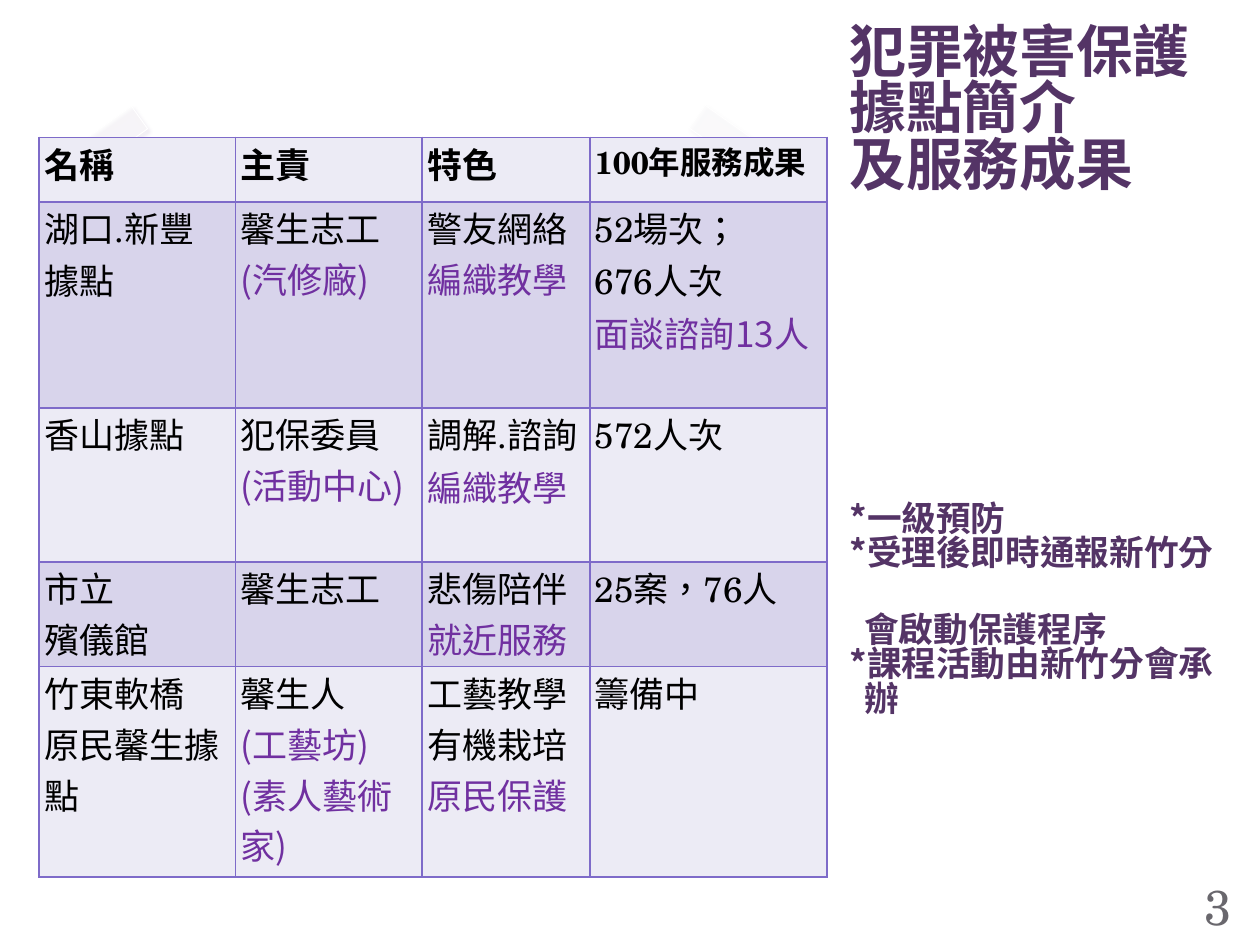
from lxml.etree import SubElement
from pptx import Presentation
from pptx.dml.color import RGBColor
from pptx.enum.shapes import MSO_SHAPE
from pptx.enum.text import MSO_ANCHOR, MSO_AUTO_SIZE, PP_ALIGN
from pptx.oxml import parse_xml
from pptx.oxml.ns import nsdecls, qn
from pptx.util import Cm, Pt

# Content: each table cell holds its plain lines, then its accented lines
HEADING = ["犯罪被害保護", "據點簡介", "及服務成果"]
HEADERS = ["名稱", "主責", "特色", "100年服務成果"]
SITES = [
    [(["湖口.新豐", "據點"], []), (["馨生志工"], ["(汽修廠)"]),
     (["警友網絡"], ["編織教學"]), (["52場次；", "676人次"], ["面談諮詢13人"])],
    [(["香山據點"], []), (["犯保委員"], ["(活動中心)"]),
     (["調解.諮詢"], ["編織教學"]), (["572人次"], [])],
    [(["市立", "殯儀館"], []), (["馨生志工"], []),
     (["悲傷陪伴"], ["就近服務"]), (["25案，76人"], [])],
    [(["竹東軟橋", "原民馨生據點"], []), (["馨生人"], ["(工藝坊)", "(素人藝術家)"]),
     (["工藝教學", "有機栽培"], ["原民保護"]), (["籌備中"], [])],
]
# Notes: text, first-line indent (cm), space before (pt)
NOTES = [
    ("*一級預防", -0.3, 0),
    ("*受理後即時通報新竹分", -0.3, 0),
    ("會啟動保護程序", 0, 24),
    ("*課程活動由新竹分會承\v辦", -0.3, 0),
]
PAGE_NUMBER = "3"

SANS, SERIF = "Noto Sans CJK SC", "TeX Gyre Schola"
THEME = {
    "heading": {"name": SANS, "size": Pt(32.4), "bold": True, "color": "543466"},
    "note": {"name": SANS, "size": Pt(19.8), "bold": True, "color": "543466"},
    "header": {"name": SERIF, "size": Pt(20), "bold": True, "color": "000000"},
    "small header": {"name": SERIF, "size": Pt(18), "bold": True, "color": "000000"},
    "plain": {"name": SERIF, "size": Pt(20), "bold": False, "color": "000000"},
    "accent": {"name": SANS, "size": Pt(20), "bold": False, "color": "7030A0"},
    "number": {"name": SERIF, "size": Pt(28), "bold": False, "color": "69676D"},
    "bands": ["ECEBF5", "D8D4EB"],
    "border": "7E6BC9",
    "paper": "FFFFFF",
    "tape": "FBFBFB",
}

# Layout in centimetres
COLUMN_WIDTHS = [3.96, 3.76, 3.38, 4.78]
ROW_HEIGHTS = [1.3, 3.18, 2.11, 2.11, 4.24]
TABLE_LEFT, TABLE_TOP = 0.79, 2.77
SIDE_LEFT, SIDE_WIDTH = 16.87, 8.13
TAPES = [  # left, top, width, height, rotation, shadow colour, shadow opacity
    (1.09, 2.64, 1.9, 0.56, 324.5, "C0B2CF", 40),
    (13.89, 2.59, 1.8, 0.56, 35.1, "C9C2D1", 20),
]


def add_span(para, text, style):
    para.text = text
    for span in para.runs:
        for name, value in THEME[style].items():
            if name == "color":
                span.font.color.rgb = RGBColor.from_string(value)
            else:
                setattr(span.font, name, value)
        properties = span.font._element
        properties.set("lang", "zh-TW")
        SubElement(properties, qn("a:ea")).set("typeface", SANS)


def fill_frame(frame, lines, **formats):
    for index, (text, style) in enumerate(lines):
        para = frame.add_paragraph() if index else frame.paragraphs[0]
        add_span(para, text, style)
        for name, value in formats.items():
            setattr(para, name, value)


def place(box, left, top, width, height):
    box.left, box.top, box.width, box.height = map(Cm, (left, top, width, height))


def set_frame(frame, **formats):
    settings = {"word_wrap": True, "auto_size": MSO_AUTO_SIZE.NONE,
                "margin_top": 0, "margin_bottom": 0} | formats
    for name, value in settings.items():
        setattr(frame, name, value)


def add_panel(page, kind, spot, color, line_width):
    panel = page.shapes.add_shape(kind, *map(Cm, spot))
    panel.shadow.inherit = False
    panel.fill.solid()
    panel.fill.fore_color.rgb = RGBColor.from_string(color)
    panel.line.color.rgb = RGBColor.from_string(THEME["paper"])
    panel.line.width = Pt(line_width)
    return panel


def add_backdrop(page):
    add_panel(page, MSO_SHAPE.RECTANGLE, (2.11, 2.97, 12.7, 12.7), THEME["paper"], 7)
    for *spot, rotation, shadow, opacity in TAPES:
        tape = add_panel(page, MSO_SHAPE.FLOWCHART_PROCESS, spot, THEME["tape"], 0.5)
        tape.rotation = rotation
        properties = tape._element.spPr
        color = properties.find(qn("a:solidFill"))[0]
        SubElement(color, qn("a:alpha")).set("val", "45000")
        properties.find(qn("a:effectLst")).append(parse_xml(
            f'<a:outerShdw {nsdecls("a")} blurRad="25400" dist="25400" dir="3300000">'
            f'<a:srgbClr val="{shadow}"><a:alpha val="{opacity * 1000}"/></a:srgbClr>'
            "</a:outerShdw>"))


def format_cell(cell, lines, band):
    cell.margin_left = cell.margin_right = Cm(0.1)
    cell.margin_top = cell.margin_bottom = 0
    fill_frame(cell.text_frame, lines)
    properties = cell._tc.get_or_add_tcPr()
    for side in ("lnL", "lnR", "lnT", "lnB"):
        properties.append(parse_xml(
            f'<a:{side} {nsdecls("a")} w="12700"><a:solidFill>'
            f'<a:srgbClr val="{THEME["border"]}"/></a:solidFill></a:{side}>'))
    cell.fill.solid()
    cell.fill.fore_color.rgb = RGBColor.from_string(band)


def add_site_table(page):
    header_styles = ["header"] * 3 + ["small header"]
    rows = [[[pair] for pair in zip(HEADERS, header_styles)]]
    for site in SITES:
        rows.append([[(text, "plain") for text in plain]
                     + [(text, "accent") for text in accent]
                     for plain, accent in site])
    table = page.shapes.add_table(
        len(rows), len(HEADERS), Cm(TABLE_LEFT), Cm(TABLE_TOP),
        Cm(sum(COLUMN_WIDTHS)), Cm(sum(ROW_HEIGHTS))).table
    table.first_row = table.horz_banding = False
    for column, width in zip(table.columns, COLUMN_WIDTHS):
        column.width = Cm(width)
    for index, (row, height) in enumerate(zip(table.rows, ROW_HEIGHTS)):
        row.height = Cm(height)
        for cell, lines in zip(row.cells, rows[index]):
            format_cell(cell, lines, THEME["bands"][index % 2])


def add_side_text(page):
    # Heading
    title, body = page.placeholders
    place(title, SIDE_LEFT, 0.55, SIDE_WIDTH, 4.2)
    set_frame(title.text_frame, vertical_anchor=MSO_ANCHOR.TOP)
    fill_frame(title.text_frame, [("\v".join(HEADING), "heading")],
               alignment=PP_ALIGN.LEFT, line_spacing=0.83)
    # Notes with hanging asterisks
    place(body, SIDE_LEFT, 10.15, SIDE_WIDTH, 5.4)
    set_frame(body.text_frame, vertical_anchor=MSO_ANCHOR.TOP)
    fill_frame(body.text_frame, [(text, "note") for text, *_ in NOTES],
               alignment=PP_ALIGN.LEFT, line_spacing=0.83)
    for para, (_, indent, gap) in zip(body.text_frame.paragraphs, NOTES):
        para.space_before = Pt(gap)
        properties = para._p.get_or_add_pPr()
        properties.set("marL", str(Cm(0.3)))
        properties.set("indent", str(Cm(indent)))
        SubElement(properties, qn("a:buNone"))


def add_page_number(page):
    box = page.shapes.add_textbox(Cm(23.93), Cm(17.53), Cm(1.27), Cm(1.32))
    set_frame(box.text_frame, vertical_anchor=MSO_ANCHOR.BOTTOM,
              margin_left=0, margin_right=0)
    fill_frame(box.text_frame, [(PAGE_NUMBER, "number")], alignment=PP_ALIGN.CENTER)


def main():
    deck = Presentation()
    deck.slide_width, deck.slide_height = Cm(25.4), Cm(19.05)
    page = deck.slides.add_slide(deck.slide_layouts[1])
    add_backdrop(page)
    add_side_text(page)
    add_page_number(page)
    add_site_table(page)
    deck.save("out.pptx")


if __name__ == "__main__":
    main()
